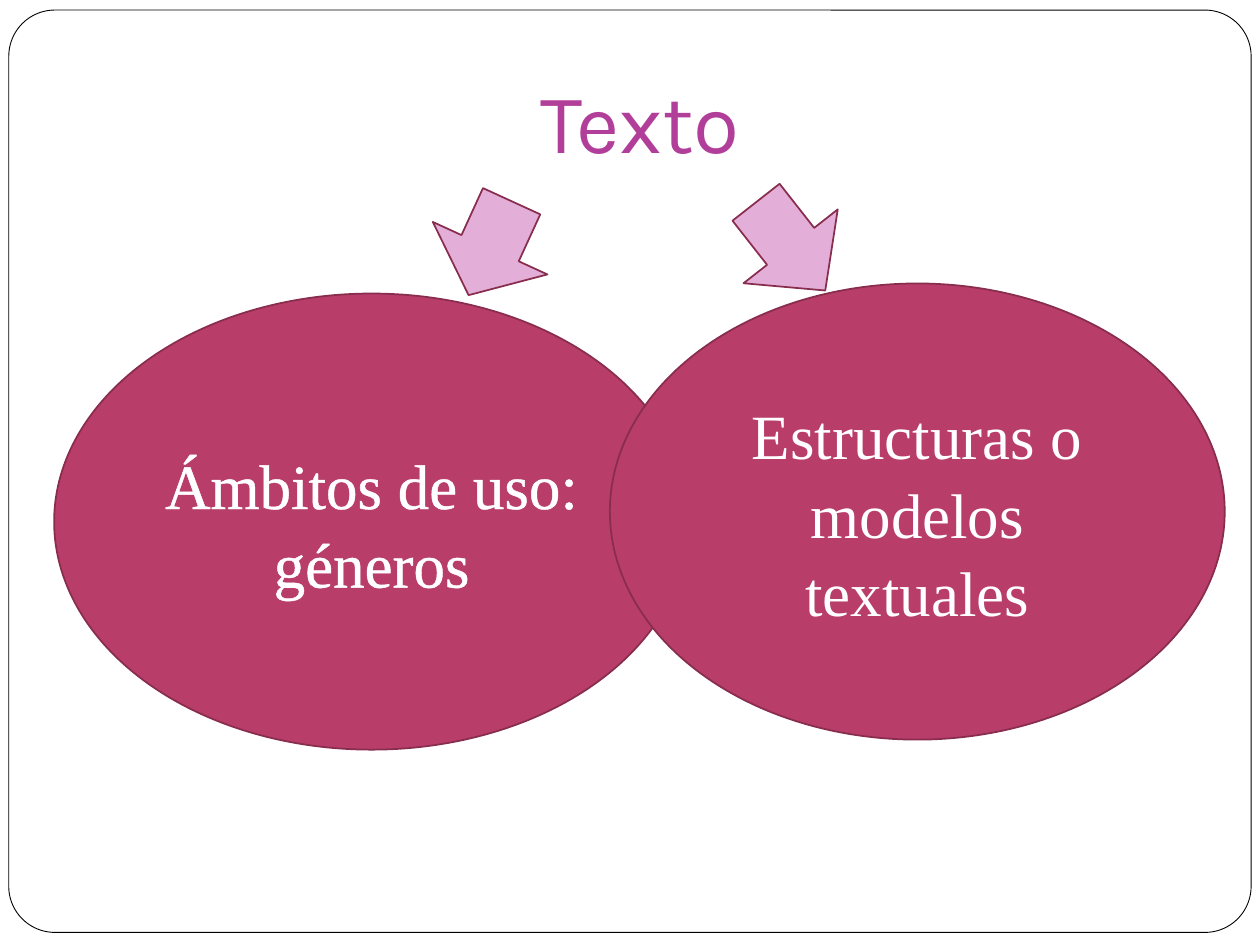
"""Build a slide that splits Texto into two overlapping ovals."""
from lxml import etree
from pptx import Presentation
from pptx import util as u
from pptx.dml.color import RGBColor
from pptx.enum import shapes, text
from pptx.oxml.ns import qn

KIND = shapes.MSO_SHAPE
WHITE, PINK, ROSE, WINE = "FFFFFF", "E3AFD8", "B83D68", "882D4D"
TITLE = ("Texto", (0.83, 0.44, 8.5, 1.01))
FRAME = (0.07, 0.08, 9.86, 7.32)
OVALS = [
    ("Ámbitos de uso: géneros", (0.43, 2.33, 5.04, 3.62), 1.45),
    ("Estructuras o modelos textuales", (4.84, 2.25, 4.88, 3.62), 0),
]
ARROWS = [((3.39, 1.56, 1, 0.82), 24.6), ((5.8, 1.51, 0.95, 0.89), 321.9)]


def hue(code):
    return RGBColor.from_string(code)


def draw(slide, kind, box, fill, line, width=1):
    shape = slide.shapes.add_shape(kind, *map(u.Inches, box))
    shape.shadow.inherit = False
    shape.fill.solid()
    shape.fill.fore_color.rgb = hue(fill)
    shape.line.color.rgb = hue(line)
    shape.line.width = u.Pt(width)
    return shape


def write(shape, words, size, font, color, anchor, space=1.0, edge=0):
    frame = shape.text_frame
    frame.word_wrap = True
    frame.auto_size = text.MSO_AUTO_SIZE.NONE
    frame.vertical_anchor = anchor
    para = frame.paragraphs[0]
    para.alignment = text.PP_ALIGN.CENTER
    para.line_spacing = space
    run = para.add_run()
    run.text = words
    run.font.size = u.Pt(size)
    run.font.name = font
    run.font.color.rgb = hue(color)
    if edge:
        line = etree.Element(qn("a:ln"), w=str(u.Pt(edge)))
        fill = etree.SubElement(line, qn("a:solidFill"))
        etree.SubElement(fill, qn("a:srgbClr"), val=color)
        run.font._element.insert(0, line)


def main():
    deck = Presentation()
    deck.slide_width, deck.slide_height = u.Inches(10), u.Inches(7.5)
    slide = deck.slides.add_slide(deck.slide_layouts[5])

    frame = draw(slide, KIND.ROUNDED_RECTANGLE, FRAME, WHITE, "000000", 0.5)
    frame.adjustments[0] = 0.05
    slide.shapes._spTree.insert(2, frame._element)

    words, box = TITLE
    title = slide.shapes.title
    title.left, title.top, title.width, title.height = map(u.Inches, box)
    write(title, words, 48, "Karla", "B13F9A", text.MSO_ANCHOR.BOTTOM)
    title.text_frame.margin_bottom = u.Inches(0.1)

    for words, box, edge in OVALS:
        oval = draw(slide, KIND.OVAL, box, ROSE, WINE)
        write(oval, words, 36, "Times New Roman", WHITE,
              text.MSO_ANCHOR.MIDDLE, space=1.04, edge=edge)

    for box, turn in ARROWS:
        draw(slide, KIND.DOWN_ARROW, box, PINK, WINE).rotation = turn

    deck.save("out.pptx")


if __name__ == "__main__":
    main()
